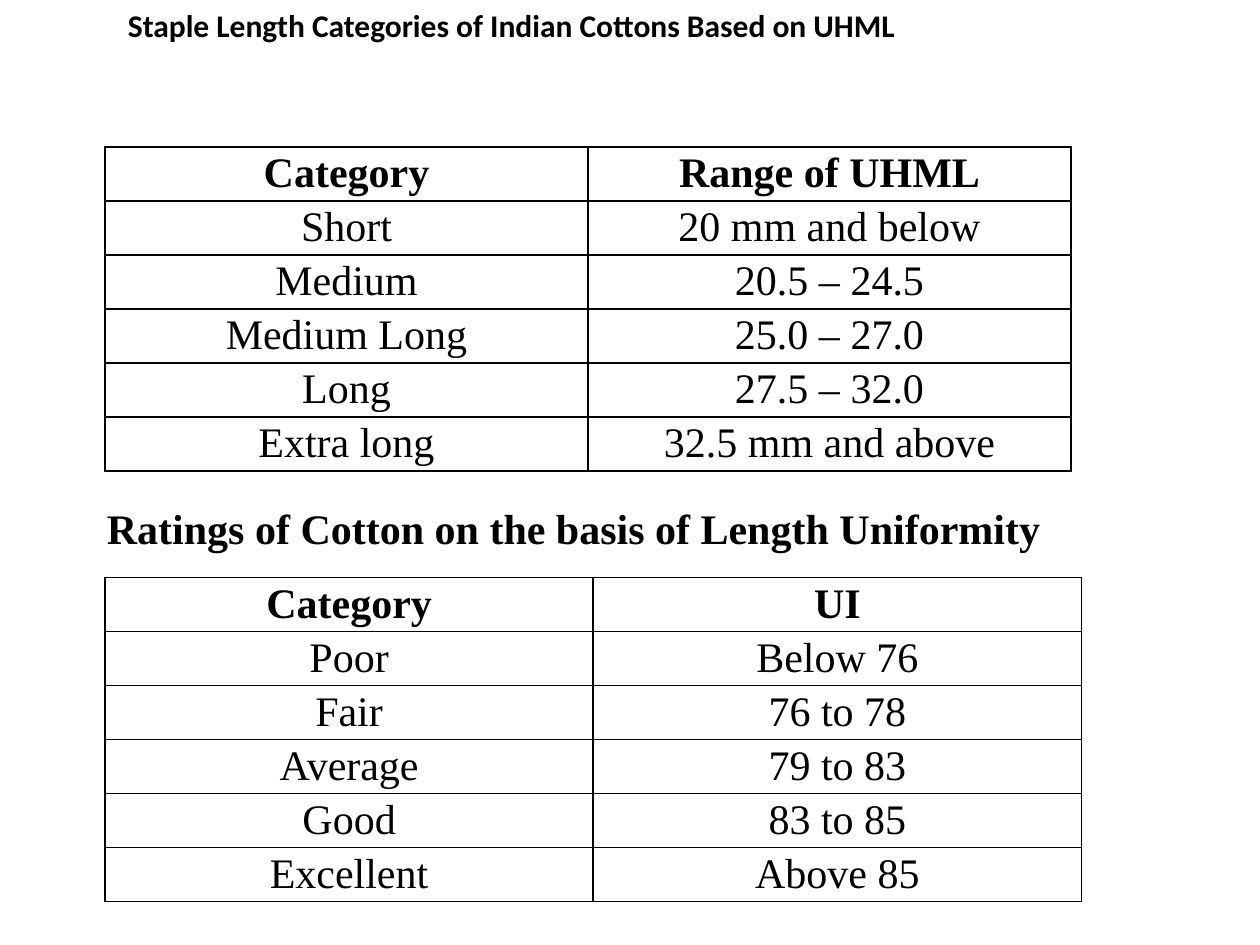
from dataclasses import dataclass

from lxml.etree import SubElement
from pptx import Presentation
from pptx.dml.color import RGBColor
from pptx.enum.text import MSO_ANCHOR as Anchor, PP_ALIGN as Align
from pptx.oxml.ns import qn
from pptx.util import Pt


@dataclass(frozen=True)
class Theme:
    ink: str = "000000"
    title_font: str = "Calibri"
    body_font: str = "Times New Roman"
    title_size: int = 18
    body_size: int = 24
    line_spacing: float = 1.07
    border: int = 1


THEME = Theme()

# Content: headings as (text, font, size, (left, top, width, height), top inset)
HEADINGS = [
    ("Staple Length Categories of Indian Cottons Based on UHML",
     THEME.title_font, THEME.title_size, (66, 0, 588, 58.4), 3.6),
    ("Ratings of Cotton on the basis of Length Uniformity",
     THEME.body_font, THEME.body_size, (54, 282, 588, 65.5), 5.2),
]

STAPLE_LENGTHS = [
    ("Category", "Range of UHML"),
    ("Short", "20 mm and below"),
    ("Medium", "20.5 – 24.5"),
    ("Medium Long", "25.0 – 27.0"),
    ("Long", "27.5 – 32.0"),
    ("Extra long", "32.5 mm and above"),
]
UNIFORMITY_RATINGS = [
    ("Category", "UI"),
    ("Poor", "Below 76"),
    ("Fair", "76 to 78"),
    ("Average", "79 to 83"),
    ("Good", "83 to 85"),
    ("Excellent", "Above 85"),
]

# Tables as (rows, top, width)
TABLES = [(STAPLE_LENGTHS, 84, 552), (UNIFORMITY_RATINGS, 330, 558)]
TABLE_LEFT = 60
ROW_HEIGHT = 30.86
CELL_INSET = 5.4


def style_run(paragraph, font_name, size, bold):
    font = paragraph.runs[0].font
    font.name, font.size, font.bold = font_name, Pt(size), bold
    font.color.rgb = RGBColor.from_string(THEME.ink)


def add_heading(slide, text, font_name, size, box, top_inset):
    heading = slide.shapes.add_textbox(*map(Pt, box)).text_frame
    heading.word_wrap = True
    heading.vertical_anchor = Anchor.TOP
    heading.margin_top = Pt(top_inset)
    heading.text = text
    style_run(heading.paragraphs[0], font_name, size, True)


def add_borders(cell):
    properties = cell._tc.get_or_add_tcPr()
    for side in ("a:lnL", "a:lnR", "a:lnT", "a:lnB"):
        line = SubElement(properties, qn(side), w=str(Pt(THEME.border)))
        fill = SubElement(line, qn("a:solidFill"))
        SubElement(fill, qn("a:srgbClr"), val=THEME.ink)


def fill_cell(cell, text, bold):
    cell.margin_left = cell.margin_right = Pt(CELL_INSET)
    cell.margin_top = cell.margin_bottom = 0
    add_borders(cell)
    cell.fill.background()
    cell.text = text
    paragraph = cell.text_frame.paragraphs[0]
    paragraph.alignment = Align.CENTER
    paragraph.line_spacing = THEME.line_spacing
    style_run(paragraph, THEME.body_font, THEME.body_size, bold)


def add_grid(slide, rows, top, width):
    grid = slide.shapes.add_table(
        len(rows), len(rows[0]), Pt(TABLE_LEFT), Pt(top),
        Pt(width), Pt(ROW_HEIGHT * len(rows))).table
    grid.horz_banding = False
    for r, row in enumerate(rows):
        for c, text in enumerate(row):
            fill_cell(grid.cell(r, c), text, bold=r == 0)


def main():
    deck = Presentation()
    deck.slide_width, deck.slide_height = Pt(720), Pt(540)
    slide = deck.slides.add_slide(deck.slide_layouts[6])
    # Each heading stands above its table
    for heading, table in zip(HEADINGS, TABLES):
        add_grid(slide, *table)
        add_heading(slide, *heading)
    deck.save("out.pptx")


if __name__ == "__main__":
    main()
